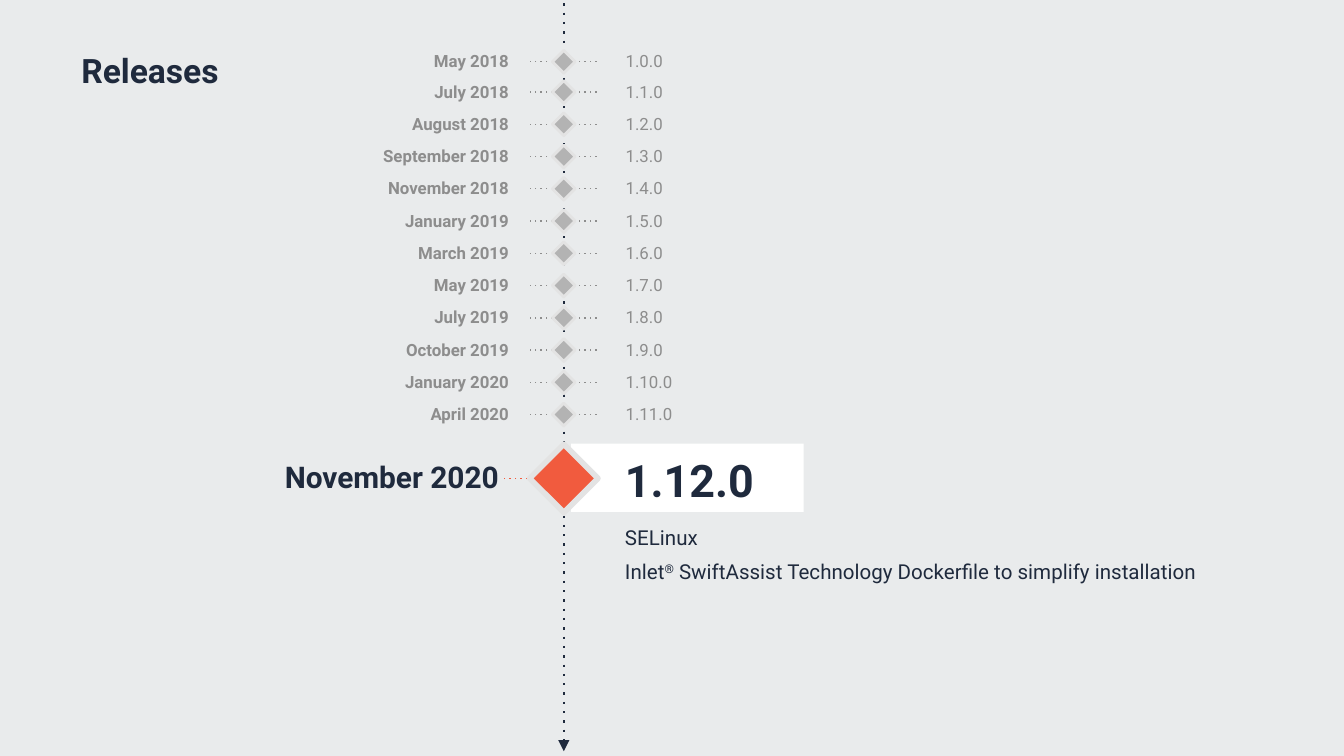
"""Build the release timeline slide."""
from typing import NamedTuple, Optional

from lxml.etree import SubElement
from pptx import Presentation
from pptx.dml.color import RGBColor
from pptx.enum.shapes import MSO_CONNECTOR, MSO_SHAPE
from pptx.enum.text import MSO_ANCHOR, MSO_AUTO_SIZE, PP_ALIGN
from pptx.oxml.ns import qn
from pptx.util import Pt

EMU_PER_PX = 4572
FONT = "Roboto"
NAVY, GRAY, ORANGE = "1F2A3D", "8D8D8D", "F15B3E"
RIM, MARK, WHITE, BACK = "E3E3E3", "B3B3B3", "FFFFFF", "E9EBEC"
AXIS_X = 839
FIRST_Y, ROW_STEP, MIN_Y = 89, 48, 92


class Release(NamedTuple):
    """A past release on the timeline."""
    date: str
    version: str


class Box(NamedTuple):
    """A rectangle in px."""
    x: int
    y: int
    w: int
    h: int


RELEASES = [
    Release("May 2018", "1.0.0"),
    Release("July 2018", "1.1.0"),
    Release("August 2018", "1.2.0"),
    Release("September 2018", "1.3.0"),
    Release("November 2018", "1.4.0"),
    Release("January 2019", "1.5.0"),
    Release("March 2019", "1.6.0"),
    Release("May 2019", "1.7.0"),
    Release("July 2019", "1.8.0"),
    Release("October 2019", "1.9.0"),
    Release("January 2020", "1.10.0"),
    Release("April 2020", "1.11.0"),
]


def px(n: int) -> int:
    """Turn px into EMU."""
    return n * EMU_PER_PX


def rgb(color: str) -> RGBColor:
    """Turn a hex string into a colour."""
    return RGBColor.from_string(color)


def add_run(p, text: str, *, size: float, color: str = NAVY,
            bold: bool = False, baseline: int = 0) -> None:
    """Add a formatted run to a paragraph."""
    r = p.add_run()
    r.text = text
    r.font.name, r.font.size, r.font.bold = FONT, Pt(size), bold
    r.font.color.rgb = rgb(color)
    if baseline:
        r._r.get_or_add_rPr().set("baseline", str(baseline * 1000))


def set_frame(sp, box: Box, inset: tuple[int, int] = (20, 20),
              anchor=MSO_ANCHOR.TOP):
    """Place a text shape and return its text frame."""
    sp.left, sp.top, sp.width, sp.height = map(px, box)
    tf = sp.text_frame
    tf.auto_size, tf.word_wrap = MSO_AUTO_SIZE.NONE, True
    tf.margin_left = tf.margin_right = px(inset[0])
    tf.margin_top = tf.margin_bottom = px(inset[1])
    tf.vertical_anchor = anchor
    return tf


def add_text(s, text: str, box: Box, *, inset: tuple[int, int] = (8, 10),
             align=PP_ALIGN.LEFT, anchor=MSO_ANCHOR.TOP, **fmt) -> None:
    """Add a one-line text box."""
    sp = s.shapes.add_textbox(0, 0, 0, 0)
    p = set_frame(sp, box, inset, anchor).paragraphs[0]
    p.alignment = align
    add_run(p, text, **fmt)


def add_dots(s, x1: int, y1: int, x2: int, y2: int, color: str,
             width: float = 0.75, arrow: bool = False) -> None:
    """Draw a dotted line, with an arrowhead at its end if asked."""
    c = s.shapes.add_connector(MSO_CONNECTOR.STRAIGHT, *map(px, (x1, y1, x2, y2)))
    c.line.color.rgb, c.line.width = rgb(color), Pt(width)
    ln = c.line._get_or_add_ln()
    SubElement(ln, qn("a:prstDash"), val="dot")
    if arrow:
        SubElement(ln, qn("a:tailEnd"), type="triangle")
    SubElement(c._element.spPr, qn("a:effectLst"))


def add_rect(s, box: Box, fill: str, rim: Optional[float] = None,
             rotation: int = 0) -> None:
    """Draw a filled rectangle."""
    sp = s.shapes.add_shape(MSO_SHAPE.RECTANGLE, *map(px, box))
    sp.shadow.inherit = False
    sp.rotation = rotation
    sp.fill.solid()
    sp.fill.fore_color.rgb = rgb(fill)
    if rim is None:
        sp.line.fill.background()
    else:
        sp.line.color.rgb, sp.line.width = rgb(RIM), Pt(rim)


def add_diamond(s, x: int, y: int, side: int, fill: str, rim: float) -> None:
    """Draw a square turned on its corner around a centre."""
    half = side // 2
    add_rect(s, Box(x - half, y - half, side, side), fill, rim, 45)


def add_release(s, release: Release, y: int) -> None:
    """Draw one past release around its centre line."""
    add_text(s, release.version, Box(923, y - 26, 100, 50), size=9, color=GRAY)
    add_text(s, release.date, Box(561, y - 26, 204, 50), size=9, color=GRAY,
             bold=True, align=PP_ALIGN.RIGHT)
    add_dots(s, 888, y, 788, y, GRAY)
    add_diamond(s, AXIS_X, y, 24, MARK, 1.5)


def add_item(p, before: int) -> None:
    """Make a body paragraph plain, without a bullet."""
    pPr = p._p.get_or_add_pPr()
    pPr.set("marL", "0")
    pPr.set("indent", "0")
    SubElement(pPr, qn("a:buNone"))
    p.space_before = Pt(before)


def fill_details(body) -> None:
    """Write the current version and its features."""
    tf = set_frame(body, Box(910, 654, 902, 492))
    version, feature, installer = tf.paragraphs[0], tf.add_paragraph(), tf.add_paragraph()
    for p, before in ((version, 0), (feature, 10), (installer, 5)):
        add_item(p, before)
    add_run(version, "1.12.0", size=24, bold=True)
    add_run(feature, "SELinux", size=11)
    add_run(installer, "Inlet", size=11)
    add_run(installer, "®", size=11, baseline=30)
    add_run(installer, " SwiftAssist Technology Dockerfile to simplify installation",
            size=11)


def main() -> None:
    """Build and save the slide."""
    prs = Presentation()
    prs.slide_width, prs.slide_height = px(2000), px(1125)
    s = prs.slides.add_slide(prs.slide_layouts[1])
    s.background.fill.solid()
    s.background.fill.fore_color.rgb = rgb(BACK)
    title, body = s.shapes.title, s.placeholders[1]

    p = set_frame(title, Box(101, 20, 448, 168), anchor=MSO_ANCHOR.MIDDLE).paragraphs[0]
    p.alignment = PP_ALIGN.LEFT
    add_run(p, "Releases", size=18, bold=True)

    add_dots(s, AXIS_X, 5, AXIS_X, 1118, NAVY, 1.25, arrow=True)
    for i, release in enumerate(RELEASES):
        add_release(s, release, max(MIN_Y, FIRST_Y + i * ROW_STEP))

    add_dots(s, 850, 712, 750, 712, ORANGE)
    add_rect(s, Box(850, 660, 346, 102), WHITE)
    s.shapes._spTree.append(body._element)
    fill_details(body)
    add_text(s, "November 2020", Box(340, 652, 422, 114), inset=(20, 20), size=16,
             bold=True, align=PP_ALIGN.RIGHT, anchor=MSO_ANCHOR.MIDDLE)
    add_diamond(s, AXIS_X, 712, 72, ORANGE, 3)
    prs.save("out.pptx")


if __name__ == "__main__":
    main()
